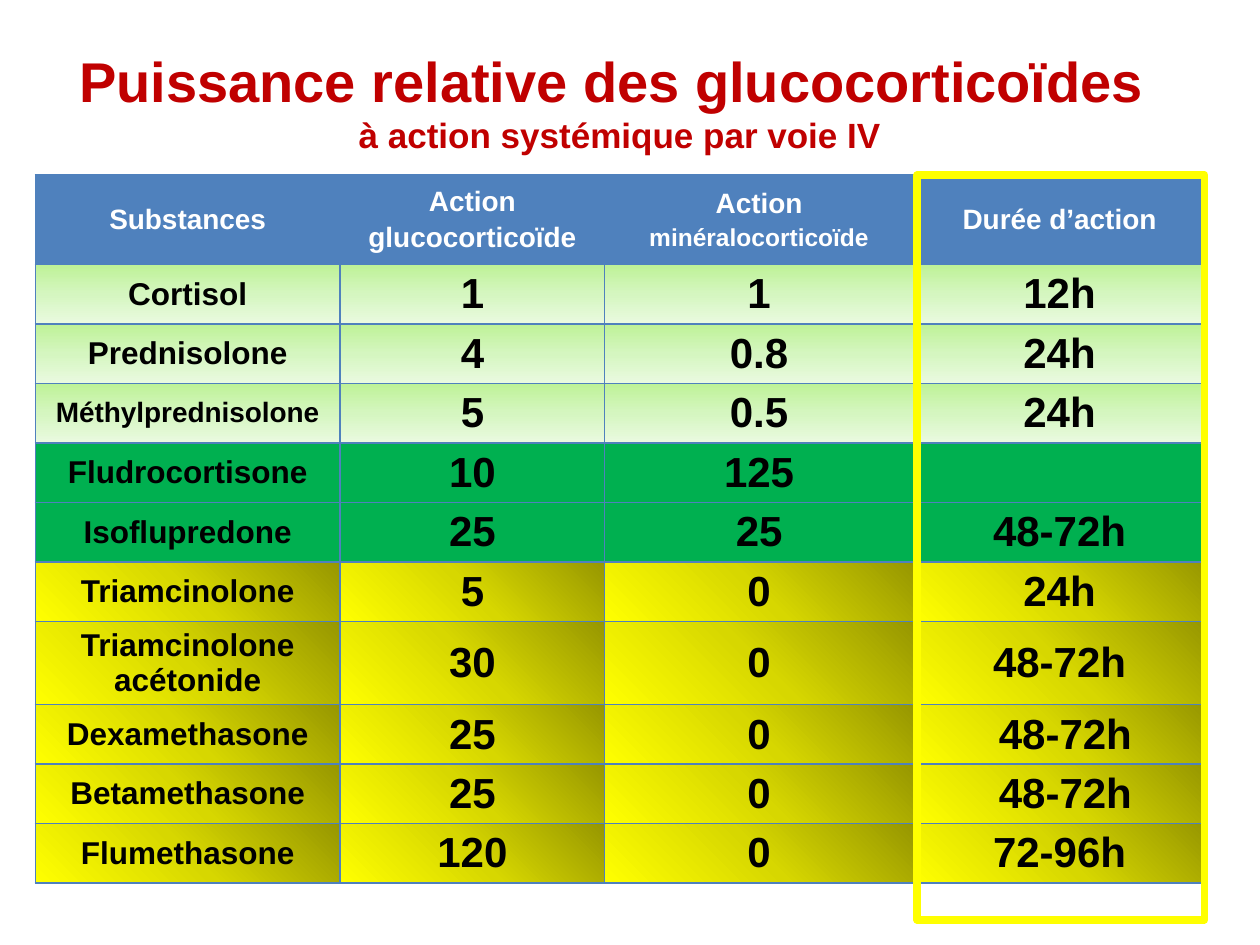
from dataclasses import dataclass
from pptx import Presentation
from pptx.dml.color import RGBColor
from pptx.enum.shapes import MSO_SHAPE
from pptx.enum.text import MSO_ANCHOR, PP_ALIGN
from pptx.oxml import parse_xml
from pptx.oxml.ns import nsdecls
from pptx.util import Inches, Pt


@dataclass(frozen=True)
class Theme:
    """Colours, type sizes and font of the slide."""
    font: str = "Arial"
    red: str = "C00000"
    blue: str = "4F81BD"
    white: str = "FFFFFF"
    black: str = "000000"
    yellow: str = "FFFF00"
    green: tuple = ("00B050",)
    lime: tuple = ("BEF297", "D5F6C0", "EAFAE0", 90)
    gold: tuple = ("979700", "D7D700", "FFFF00", 135)
    title: int = 32
    sub: int = 20
    head: int = 16
    small: int = 14
    name: int = 18
    value: int = 24


THEME = Theme()
COLS = (2.42, 2.1, 2.45, 2.32)
HEADS = (
    (("Substances", THEME.head),),
    (("Action", THEME.head), ("glucocorticoïde", THEME.head)),
    (("Action", THEME.head), ("minéralocorticoïde", THEME.small)),
    (("Durée d’action", THEME.head),),
)
DRUGS = (
    (THEME.lime, "Cortisol", "1", "1", "12h"),
    (THEME.lime, "Prednisolone", "4", "0.8", "24h"),
    (THEME.lime, "Méthylprednisolone", "5", "0.5", "24h"),
    (THEME.green, "Fludrocortisone", "10", "125", ""),
    (THEME.green, "Isoflupredone", "25", "25", "48-72h"),
    (THEME.gold, "Triamcinolone", "5", "0", "24h"),
    (THEME.gold, "Triamcinolone acétonide", "30", "0", "48-72h"),
    (THEME.gold, "Dexamethasone", "25", "0", " 48-72h"),
    (THEME.gold, "Betamethasone", "25", "0", " 48-72h"),
    (THEME.gold, "Flumethasone", "120", "0", "72-96h"),
)
TIGHT = {"Méthylprednisolone": THEME.head}
TALL = {"Triamcinolone acétonide": 0.66}


def apply(item, form):
    """Set each attribute of item from a dict of values."""
    for key, value in form.items():
        setattr(item, key, value)


def place(item, left, top, width, height):
    """Move and size an item, in inches."""
    box = {"left": left, "top": top, "width": width, "height": height}
    apply(item, {key: Inches(value) for key, value in box.items()})


def write(para, text, size, color):
    """Add a bold run to a centred paragraph."""
    para.alignment = PP_ALIGN.CENTER
    run = para.add_run()
    run.text = text
    apply(run.font, {"name": THEME.font, "size": Pt(size), "bold": True})
    run.font.color.rgb = RGBColor.from_string(color)


def paint(cell, fill):
    """Give a cell its borders and a plain or graded fill."""
    props = cell._tc.get_or_add_tcPr()
    for side in "LRTB":
        props.append(parse_xml(
            f'<a:ln{side} {nsdecls("a")} w="{Pt(1)}"><a:solidFill>'
            f'<a:srgbClr val="{THEME.blue}"/></a:solidFill></a:ln{side}>'))
    if len(fill) == 1:
        cell.fill.solid()
        cell.fill.fore_color.rgb = RGBColor.from_string(fill[0])
        return
    *tones, angle = fill
    stops = "".join(
        f'<a:gs pos="{i * 50000}"><a:srgbClr val="{tone}"/></a:gs>'
        for i, tone in enumerate(tones))
    props.append(parse_xml(
        f'<a:gradFill {nsdecls("a")} rotWithShape="1"><a:gsLst>{stops}'
        f'</a:gsLst><a:lin ang="{angle * 60000}" scaled="0"/></a:gradFill>'))


def fill_cell(cell, lines, color, fill):
    """Write the lines of a cell and paint it."""
    cell.vertical_anchor = MSO_ANCHOR.MIDDLE
    paint(cell, fill)
    frame = cell.text_frame
    for i, (text, size) in enumerate(lines):
        para = frame.add_paragraph() if i else frame.paragraphs[0]
        write(para, text, size, color)
        para._p.get_or_add_pPr().append(parse_xml(
            f'<a:spcBef {nsdecls("a")}><a:spcPct val="20000"/></a:spcBef>'))


def add_title(slide):
    """Fill the title placeholder with a title and a smaller line."""
    title = slide.shapes.title
    place(title, 0.43, 0.21, 8.98, 1.18)
    frame = title.text_frame
    apply(frame, {"word_wrap": True, "vertical_anchor": MSO_ANCHOR.MIDDLE})
    para = frame.paragraphs[0]
    write(para, "Puissance relative des glucocorticoïdes ", THEME.title, THEME.red)
    para.add_line_break()
    write(para, "à action systémique par voie IV", THEME.sub, THEME.red)


def add_grid(slide):
    """Add the table of substances."""
    highs = [0.71] + [TALL.get(drug[1], 0.45) for drug in DRUGS]
    grid = slide.shapes.add_table(
        len(highs), len(COLS), Inches(0.28), Inches(1.39),
        Inches(sum(COLS)), Inches(sum(highs))).table
    for col, width in zip(grid.columns, COLS):
        col.width = Inches(width)
    for row, high in zip(grid.rows, highs):
        row.height = Inches(high)
    for j, lines in enumerate(HEADS):
        fill_cell(grid.cell(0, j), lines, THEME.white, (THEME.blue,))
    for i, (fill, name, *values) in enumerate(DRUGS, 1):
        sizes = [TIGHT.get(name, THEME.name)] + [THEME.value] * len(values)
        for j, (text, size) in enumerate(zip([name, *values], sizes)):
            lines = [(text, size)] if text else []
            fill_cell(grid.cell(i, j), lines, THEME.black, fill)


def add_frame(slide):
    """Outline the column of durations."""
    frame = slide.shapes.add_shape(
        MSO_SHAPE.RECTANGLE, Inches(7.28), Inches(1.39), Inches(2.28), Inches(5.91))
    frame.shadow.inherit = False
    frame.fill.background()
    frame.line.color.rgb = RGBColor.from_string(THEME.yellow)
    frame.line.width = Pt(4.5)


def main():
    """Build and save the slide."""
    deck = Presentation()
    apply(deck, {"slide_width": Inches(10), "slide_height": Inches(7.5)})
    slide = deck.slides.add_slide(deck.slide_layouts[5])
    add_title(slide)
    add_grid(slide)
    add_frame(slide)
    deck.save("out.pptx")


if __name__ == "__main__":
    main()
